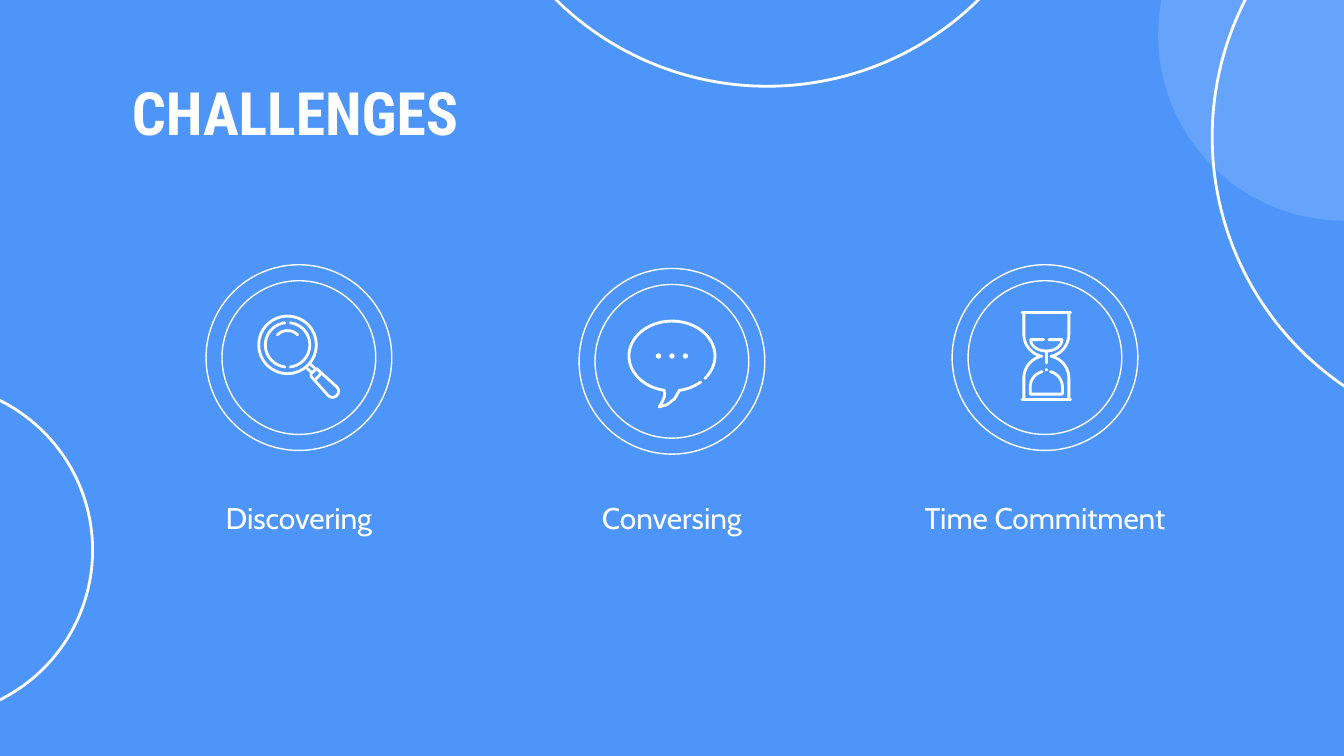
from math import cos, radians, sin

from lxml.etree import SubElement
from pptx import Presentation
from pptx.dml.color import RGBColor
from pptx.enum.shapes import MSO_CONNECTOR, MSO_SHAPE
from pptx.enum.text import MSO_ANCHOR, MSO_AUTO_SIZE, PP_ALIGN
from pptx.oxml.ns import qn
from pptx.util import Cm, Pt

BLUE = RGBColor(0x4E, 0x95, 0xFA)
WHITE = RGBColor(0xFF, 0xFF, 0xFF)


def arc(x, y, radius_x, radius_y, start, end, steps=32):
    angles = [radians(start + (end - start) * step / steps) for step in range(steps + 1)]
    return [(x + radius_x * cos(angle), y + radius_y * sin(angle)) for angle in angles]


class SlideBuilder:
    def __init__(self, deck):
        self.page = deck.slides.add_slide(deck.slide_layouts[5])
        self.shapes = self.page.shapes
        self.page.background.fill.solid()
        self.page.background.fill.fore_color.rgb = BLUE
        self.centre = (0, 0)

    def outline(self, shape, width):
        shape.shadow.inherit = False
        shape.fill.background()
        shape.line.color.rgb = WHITE
        shape.line.width = Pt(width)

    def title(self, words, left, top, width, height):
        box = self.shapes.title
        box.left, box.top, box.width, box.height = Cm(left), Cm(top), Cm(width), Cm(height)
        self.set_text(box.text_frame, words, "Roboto Condensed", 32, PP_ALIGN.LEFT, True)

    def label(self, words, left, top, width, height):
        box = self.shapes.add_textbox(Cm(left), Cm(top), Cm(width), Cm(height))
        self.set_text(box.text_frame, words, "Cabin", 16, PP_ALIGN.CENTER, False)

    def set_text(self, frame, words, font_name, size, alignment, bold):
        frame.word_wrap = True
        frame.auto_size = MSO_AUTO_SIZE.NONE
        frame.vertical_anchor = MSO_ANCHOR.TOP
        frame.margin_left = frame.margin_right = Cm(0.25)
        frame.margin_top = frame.margin_bottom = Cm(0.25)
        para = frame.paragraphs[0]
        para.text = words
        para.alignment = alignment
        para.font.name = font_name
        para.font.size = Pt(size)
        para.font.bold = bold
        para.font.color.rgb = WHITE

    def circle(self, left, top, size):
        shape = self.shapes.add_shape(
            MSO_SHAPE.OVAL, Cm(left), Cm(top), Cm(size), Cm(size))
        self.outline(shape, 1.5)

    def disc(self, left, top, size, opacity=100):
        shape = self.shapes.add_shape(
            MSO_SHAPE.OVAL, Cm(left), Cm(top), Cm(size), Cm(size))
        shape.shadow.inherit = False
        shape.fill.solid()
        shape.fill.fore_color.rgb = WHITE
        shape.line.fill.background()
        if opacity < 100:
            color = shape._element.spPr.find(qn("a:solidFill"))[0]
            SubElement(color, qn("a:alpha")).set("val", str(opacity * 1000))

    def ring(self, x, y, size):
        self.centre = (x, y)
        shape = self.shapes.add_shape(
            MSO_SHAPE.DONUT, Cm(x - size / 2), Cm(y - size / 2), Cm(size), Cm(size))
        shape.adjustments[0] = 0.086
        self.outline(shape, 0.75)

    def place(self, point):
        return tuple(Cm(middle + offset / 10) for middle, offset in zip(self.centre, point))

    def round_ends(self, shape):
        shape._element.spPr.find(qn("a:ln")).set("cap", "rnd")

    def stroke(self, points, close=False):
        start, *rest = [self.place(point) for point in points]
        builder = self.shapes.build_freeform(*start)
        builder.add_line_segments(rest, close=close)
        shape = builder.convert_to_shape()
        self.outline(shape, 1.5)
        self.round_ends(shape)

    def line(self, start, end):
        connector = self.shapes.add_connector(
            MSO_CONNECTOR.STRAIGHT, *self.place(start), *self.place(end))
        connector.line.color.rgb = WHITE
        connector.line.width = Pt(1.5)
        self.round_ends(connector)
        SubElement(connector._element.spPr, qn("a:effectLst"))

    def dot(self, x, y, radius):
        middle_x, middle_y = self.centre
        self.disc(middle_x + (x - radius) / 10, middle_y + (y - radius) / 10, radius / 5)

    def magnifier(self):
        x, y = -2.15, -2.4
        self.stroke(arc(x, y, 5.45, 5.45, 0, 360), close=True)
        for radius, start, end in ((4.2, -83, 83), (4.2, 97, 263), (2.7, 225, 315)):
            self.stroke(arc(x, y, radius, radius, start, end))
        self.line((1.5, 2), (2.4, 2.8))
        self.line((2.2, 1.3), (2.9, 1.9))
        self.line((3.2, 4.05), (4.3, 2.9))
        grip = arc(6.35, 6.35, 1.15, 1.15, -45, 135)
        self.stroke([(3.3, 2.05), *grip, (2.3, 3.55), (2.3, 3.05)], close=True)

    def speech_bubble(self):
        tail = [(-1.4, 6.6), (-1.8, 7.6), (-2.4, 8.6), (-1, 8.25), (0.5, 7.1)]
        self.stroke(arc(0, -1, 8.13, 6.6, 40, -260, 64) + tail
                    + arc(0, -1, 8.13, 6.6, 80, 48))
        for x in (-2.54, 0, 2.54):
            self.dot(x, -1, 0.5)

    def hourglass(self):
        axis, top, bottom = 0.25, -8.5, 7.9
        for y in (top, bottom):
            self.line((axis - 4.6, y), (axis + 4.6, y))
        for side in (-1, 1):
            edge = axis + side * 4.25
            upper = arc(axis, -4.4, side * 4.25, 4.25, 0, 78)
            lower = arc(axis, 3.9, side * 4.25, 4.25, -78, 0)
            self.stroke([(edge, top), *upper, *lower, (edge, bottom)])
        sand = arc(axis, -3.4, 2.95, 2.15, 180, 0)
        self.stroke([(axis - 0.5, -3.4), *sand, (axis + 0.5, -3.4)])
        self.line((axis, -1.27), (axis, 1))
        self.dot(axis, 2.3, 0.28)
        pile_left = arc(axis, 5.6, 3.05, 3.05, 255, 180)
        pile_right = arc(axis, 5.6, 3.05, 3.05, 0, -75)
        self.stroke([*pile_left, (axis - 3.05, 6.9), (axis + 3.05, 6.9), *pile_right])


def main():
    deck = Presentation()
    deck.slide_width, deck.slide_height = Cm(25.4), Cm(14.29)
    builder = SlideBuilder(deck)

    builder.circle(22.91, -3.1, 11.38)
    builder.disc(21.89, -2.84, 7.01, opacity=14)
    builder.circle(8.81, -9.75, 11.38)
    builder.circle(-4.57, 7.24, 6.32)
    builder.title("CHALLENGES", 2.24, 1.19, 7.95, 2.79)

    challenges = (
        ("Discovering", 6.76, builder.magnifier),
        ("Conversing", 6.83, builder.speech_bubble),
        ("Time Commitment", 6.76, builder.hourglass),
    )
    label_width = 6.32
    for column, (words, ring_y, draw_icon) in enumerate(challenges):
        x = 12.7 + (column - 1) * 7.05
        builder.label(words, x - label_width / 2, 9.19, label_width, 2.11)
        builder.ring(x, ring_y, 3.51)
        draw_icon()

    deck.save("out.pptx")


if __name__ == "__main__":
    main()
